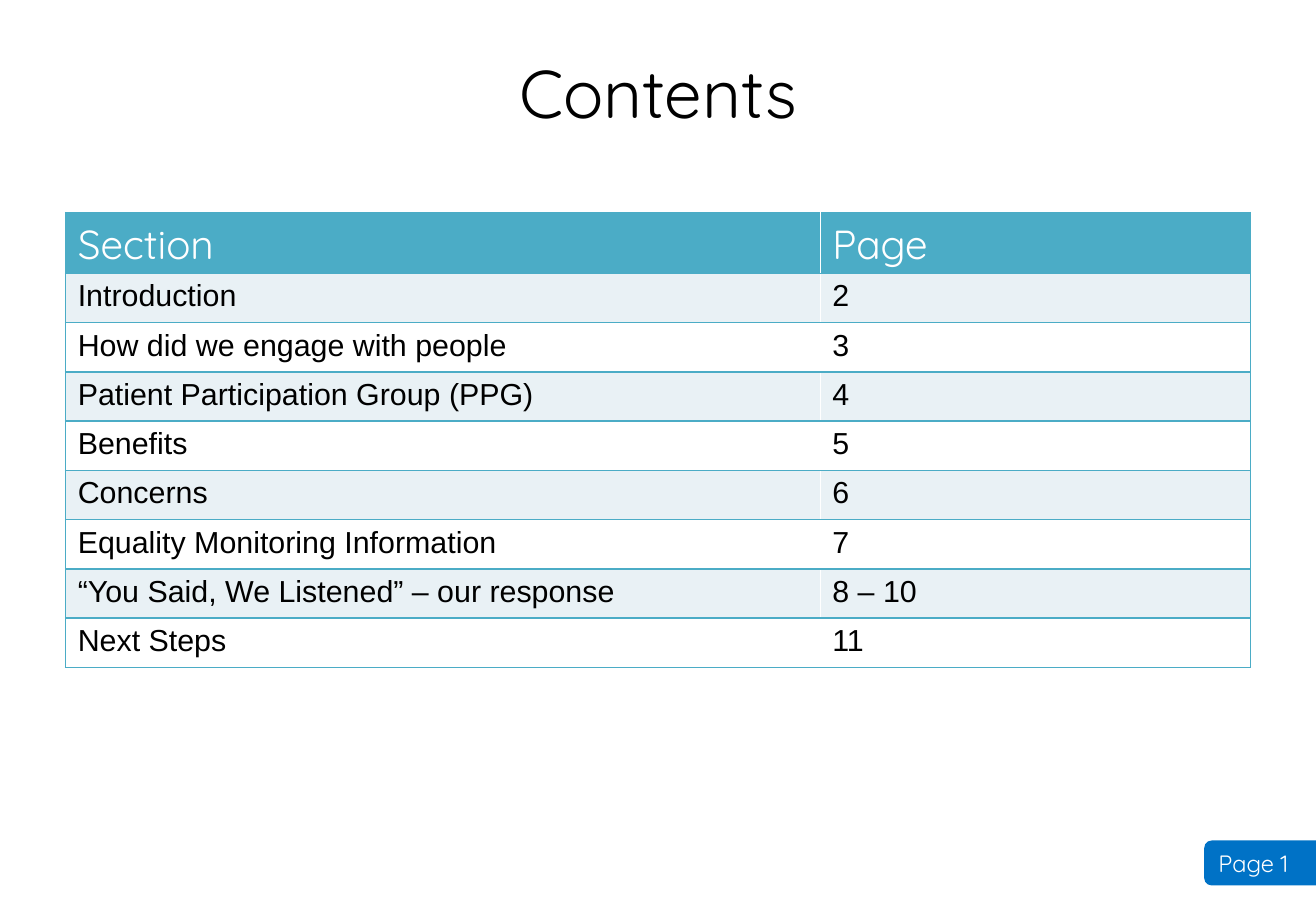
from dataclasses import dataclass

from lxml.etree import SubElement
from pptx import Presentation
from pptx.dml.color import RGBColor as Color
from pptx.enum.shapes import MSO_SHAPE as Shape
from pptx.enum.text import MSO_ANCHOR as Anchor, PP_ALIGN as Align
from pptx.oxml.ns import qn
from pptx.util import Inches, Pt


@dataclass(frozen=True)
class Theme:
    accent: str = "4BACC6"
    band: str = "E9F1F5"
    white: str = "FFFFFF"
    black: str = "000000"
    badge: str = "0072C6"
    display_font: str = "Quicksand"
    body_font: str = "Arial"
    title_size: int = 40
    header_size: int = 24
    body_size: int = 18
    badge_size: int = 14


THEME = Theme()

CONTENTS = [
    ("Section", "Page"),
    ("Introduction", "2"),
    ("How did we engage with people", "3"),
    ("Patient Participation Group (PPG)", "4"),
    ("Benefits", "5"),
    ("Concerns", "6"),
    ("Equality Monitoring Information", "7"),
    ("“You Said, We Listened” – our response", "8 – 10"),
    ("Next Steps", "11"),
]
COLUMN_WIDTHS = (6.21, 3.54)


def write_text(frame, text, font, size, color, align=Align.LEFT):
    para = frame.paragraphs[0]
    para.alignment = align
    span = para.add_run()
    span.text = text
    for name, value in {"name": font, "size": Pt(size), "bold": False}.items():
        setattr(span.font, name, value)
    span.font.color.rgb = Color.from_string(color)


def paint(target, color):
    target.fill.solid()
    target.fill.fore_color.rgb = Color.from_string(color)


def add_borders(cell, sides):
    """Draw accent lines on the given sides; call before filling the cell."""
    properties = cell._tc.get_or_add_tcPr()
    for side in sides:
        line = SubElement(properties, qn(f"a:ln{side}"), w=str(Pt(1)))
        fill = SubElement(line, qn("a:solidFill"))
        SubElement(fill, qn("a:srgbClr"), val=THEME.accent)


def add_title(page, text):
    box = page.shapes.add_textbox(Inches(0.54), Inches(0.13), Inches(9.75), Inches(1.25))
    frame = box.text_frame
    for name, value in {"word_wrap": True, "vertical_anchor": Anchor.MIDDLE}.items():
        setattr(frame, name, value)
    write_text(frame, text, THEME.display_font, THEME.title_size, THEME.black, Align.CENTER)


def add_contents_table(page, rows):
    height = Inches(3.65)
    table = page.shapes.add_table(
        len(rows), len(COLUMN_WIDTHS), Inches(0.54), Inches(1.75),
        Inches(sum(COLUMN_WIDTHS)), height).table
    for column, width in zip(table.columns, COLUMN_WIDTHS):
        column.width = Inches(width)

    header_style = (THEME.display_font, THEME.header_size, THEME.white)
    body_style = (THEME.body_font, THEME.body_size, THEME.black)
    for row_index, values in enumerate(rows):
        table.rows[row_index].height = height // len(rows)
        if row_index == 0:
            style, fill = header_style, THEME.accent
        else:
            style, fill = body_style, THEME.band if row_index % 2 else THEME.white
        for column_index, value in enumerate(values):
            cell = table.cell(row_index, column_index)
            # Outer edge first, then the horizontal rules
            add_borders(cell, ("LR"[column_index], "T", "B"))
            paint(cell, fill)
            write_text(cell.text_frame, value, *style)


def add_page_badge(page, text):
    badge = page.shapes.add_shape(
        Shape.ROUNDED_RECTANGLE, Inches(9.91), Inches(6.92), Inches(1.89), Inches(0.37))
    badge.shadow.inherit = False
    paint(badge, THEME.badge)
    badge.line.fill.background()
    badge.text_frame.vertical_anchor = Anchor.MIDDLE
    write_text(badge.text_frame, text, THEME.display_font, THEME.badge_size, THEME.white)


def main():
    deck = Presentation()
    deck.slide_width, deck.slide_height = Inches(10.83), Inches(7.5)
    page = deck.slides.add_slide(deck.slide_layouts[6])
    paint(page.background, THEME.white)

    add_title(page, "Contents")
    add_contents_table(page, CONTENTS)
    add_page_badge(page, "Page 1")

    deck.save("out.pptx")


if __name__ == "__main__":
    main()
